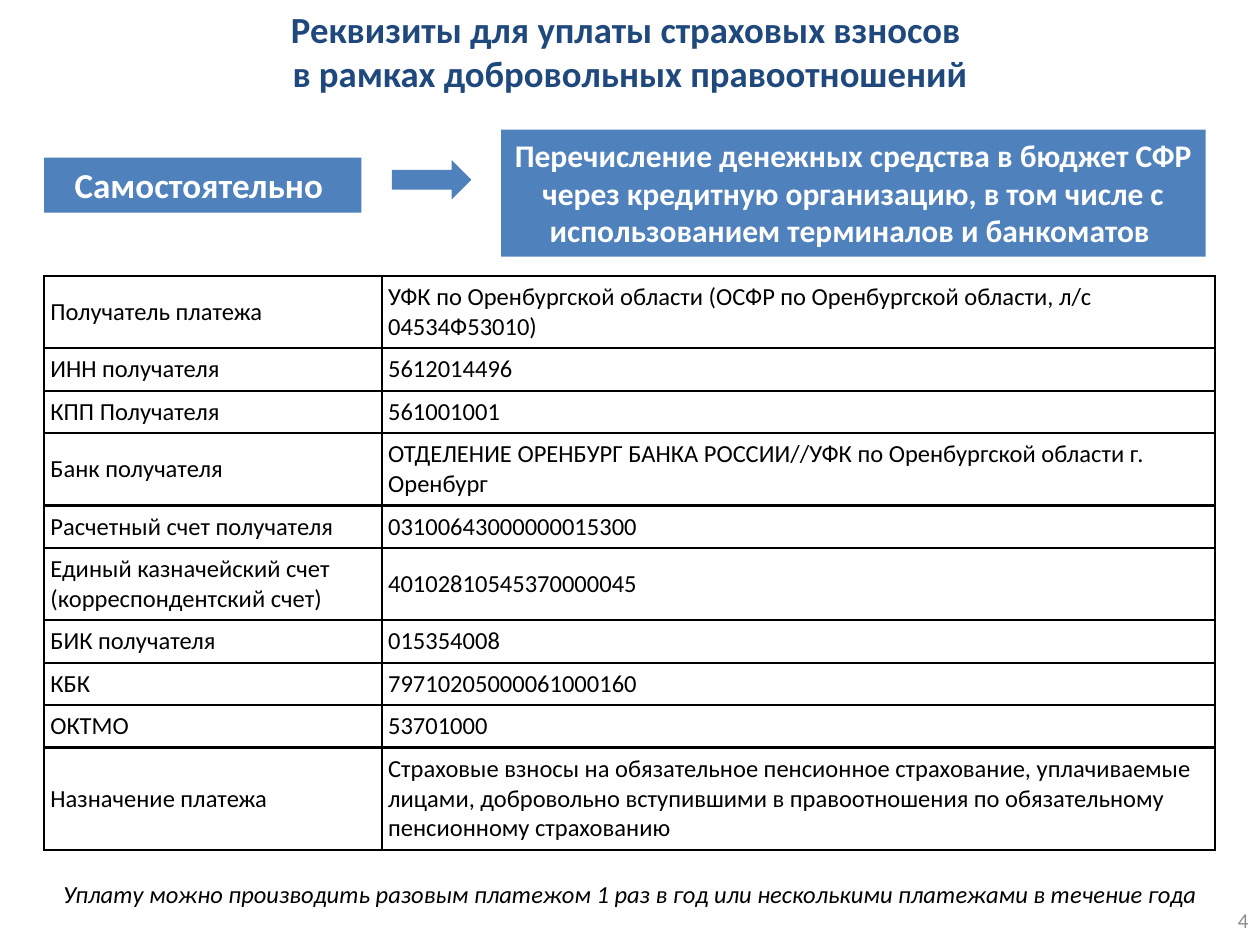
"""Build a slide with payment details for voluntary insurance contributions."""
from lxml import etree
from pptx import Presentation
from pptx.dml.color import RGBColor
from pptx.enum import shapes, text
from pptx.oxml.ns import qn
from pptx.util import Pt

TITLE = ["Реквизиты для уплаты страховых взносов ", "в рамках добровольных правоотношений"]
METHOD = "Самостоятельно "
ACTION = ("Перечисление денежных средства в бюджет СФР через кредитную организацию, "
          "в том числе с использованием терминалов и банкоматов ")
DETAILS = [
    ("Получатель платежа", "УФК по Оренбургской области (ОСФР по Оренбургской области, л/с 04534Ф53010)", 2),
    ("ИНН получателя", "5612014496", 1),
    ("КПП Получателя", "561001001", 1),
    ("Банк получателя", "ОТДЕЛЕНИЕ ОРЕНБУРГ БАНКА РОССИИ//УФК по Оренбургской области г. Оренбург", 2),
    ("Расчетный счет получателя", "03100643000000015300", 1),
    ("Единый казначейский счет (корреспондентский счет)", "40102810545370000045", 2),
    ("БИК получателя", "015354008", 1),
    ("КБК", "79710205000061000160", 1),
    ("ОКТМО", "53701000", 1),
    ("Назначение платежа", "Страховые взносы на обязательное пенсионное страхование, уплачиваемые лицами, "
     "добровольно вступившими в правоотношения по обязательному пенсионному страхованию", 3),
]
NOTE = "Уплату можно производить разовым платежом 1 раз в год или несколькими платежами в течение года"
PAGE = "4"

THEME = dict(font="Calibri", title="1F497D", accent="4F81BD", light="FFFFFF", dark="000000", muted="8C8C8C",
             title_size=21, method_size=20, action_size=18, body_size=14, page_size=12)
LEFT, TABLE_TOP = 25.2, 157.7
COLUMNS = (193, 476)
LINE_H, ROW_PAD, CELL_INSET, BORDER = 17, 7, 3.6, 1.5


def write(tf, lines, size, color, bold=False, italic=False,
          align=text.PP_ALIGN.CENTER, anchor=text.MSO_ANCHOR.MIDDLE):
    tf.word_wrap = True
    tf.auto_size = text.MSO_AUTO_SIZE.NONE
    tf.vertical_anchor = anchor
    fill_paragraphs(tf, lines, size, color, bold, italic, align)


def fill_paragraphs(tf, lines, size, color, bold=False, italic=False, align=text.PP_ALIGN.LEFT):
    for i, line in enumerate(lines):
        p = tf.paragraphs[0] if i == 0 else tf.add_paragraph()
        p.alignment = align
        r = p.add_run()
        r.text = line
        f = r.font
        f.name, f.size, f.bold, f.italic = THEME["font"], Pt(THEME[size]), bold, italic
        f.color.rgb = RGBColor.from_string(THEME[color])


def place(sp, x, y, w, h):
    sp.left, sp.top, sp.width, sp.height = map(Pt, (x, y, w, h))


def add_block(s, kind, x, y, w, h):
    sp = s.shapes.add_shape(kind, *map(Pt, (x, y, w, h)))
    sp.shadow.inherit = False
    sp.fill.solid()
    sp.fill.fore_color.rgb = RGBColor.from_string(THEME["accent"])
    sp.line.fill.background()
    return sp


def add_borders(cell):
    tc_pr = cell._tc.get_or_add_tcPr()
    for i, side in enumerate(("lnL", "lnR", "lnT", "lnB")):
        ln = etree.Element(qn(f"a:{side}"), w=str(Pt(BORDER)))
        fill = etree.SubElement(ln, qn("a:solidFill"))
        etree.SubElement(fill, qn("a:srgbClr"), val=THEME["dark"])
        tc_pr.insert(i, ln)


def add_details(s):
    heights = [ROW_PAD + LINE_H * lines for *_, lines in DETAILS]
    frame = s.shapes.add_table(len(DETAILS), len(COLUMNS), Pt(LEFT), Pt(TABLE_TOP),
                               Pt(sum(COLUMNS)), Pt(sum(heights)))
    table = frame.table
    table.first_row = table.horz_banding = False
    for col, width in zip(table.columns, COLUMNS):
        col.width = Pt(width)
    for row, height, values in zip(table.rows, heights, DETAILS):
        row.height = Pt(height)
        for cell, value in zip(row.cells, values):
            cell.margin_left = cell.margin_right = cell.margin_top = cell.margin_bottom = Pt(CELL_INSET)
            cell.vertical_anchor = text.MSO_ANCHOR.MIDDLE
            cell.fill.background()
            fill_paragraphs(cell.text_frame, [value], "body_size", "dark")
            add_borders(cell)


def main():
    prs = Presentation()
    prs.slide_width, prs.slide_height = Pt(720), Pt(540)
    s = prs.slides.add_slide(prs.slide_layouts[5])

    title = s.shapes.title
    place(title, 20, 15.1, 680, 28.1)
    write(title.text_frame, TITLE, "title_size", "title", bold=True)

    rect, top = shapes.MSO_SHAPE.RECTANGLE, text.MSO_ANCHOR.TOP
    method = add_block(s, rect, LEFT, 90, 181.4, 31.5)
    write(method.text_frame, [METHOD], "method_size", "light", bold=True, anchor=top)
    action = add_block(s, rect, 286.4, 74, 402.5, 72.7)
    write(action.text_frame, [ACTION], "action_size", "light", bold=True, anchor=top)

    add_details(s)
    add_block(s, shapes.MSO_SHAPE.RIGHT_ARROW, 224, 91.5, 45.4, 22.5)

    note = s.shapes.add_textbox(*map(Pt, (17.3, 498.5, 686, 24.5)))
    write(note.text_frame, [NOTE], "body_size", "dark", italic=True)
    page = s.shapes.add_textbox(*map(Pt, (553, 511.5, 167.5, 28.5)))
    write(page.text_frame, [PAGE], "page_size", "muted", align=text.PP_ALIGN.RIGHT)
    prs.save("out.pptx")


if __name__ == "__main__":
    main()
